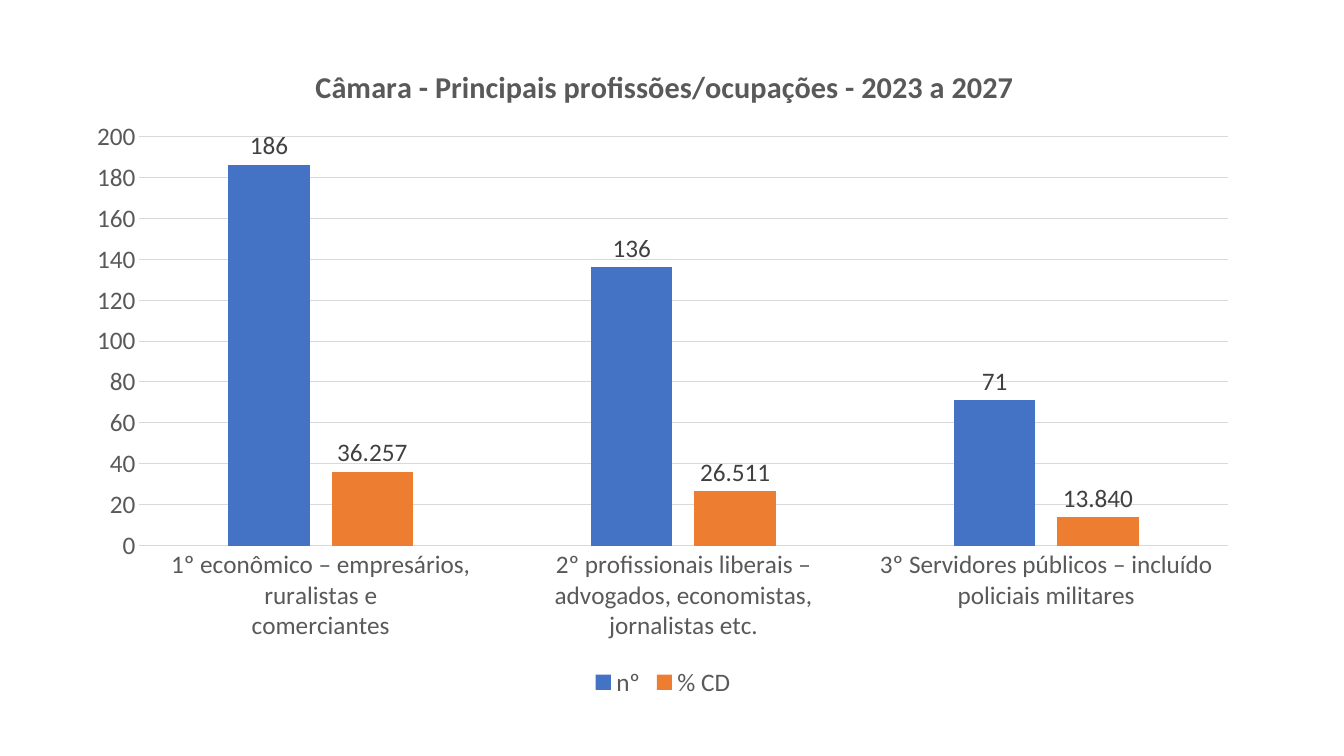
import pptx
import pptx.chart.data
import pptx.dml.color
import pptx.enum.chart
import pptx.oxml
import pptx.oxml.ns
import pptx.util
from dataclasses import dataclass

TITLE = "Câmara - Principais profissões/ocupações - 2023 a 2027"
CATEGORIES = [
    "1º econômico – empresários, ruralistas e\ncomerciantes",
    "2º profissionais liberais – advogados, economistas,\njornalistas etc.",
    "3º Servidores públicos – incluído policiais militares",
]
# name, values, colour, number format
SERIES = [
    ("nº", (186, 136, 71), "4472C4", "General"),
    ("% CD", (36.257, 26.511, 13.84), "ED7D31", "0.000"),
]
SLIDE_SIZE = (13.33, 7.5)
CHART_BOX = (0.74, 0.33, 11.67, 6.64)
# Shares of the chart's size
PLOT_SHARE = {"x": 0.055, "y": 0.154, "w": 0.925, "h": 0.612}
TITLE_SHARE = {"x": 0.2, "y": 0.04}


@dataclass(frozen=True)
class Theme:
    font: str = "Calibri"
    text: str = "595959"
    label: str = "404040"
    line: str = "D9D9D9"
    body_size: float = 18
    title_size: float = 21.6
    line_width: float = 0.75


THEME = Theme()


def color(code):
    return pptx.dml.color.RGBColor.from_string(code)


def style_font(font, code=THEME.text, size=THEME.body_size, bold=False):
    font.name = THEME.font
    font.size = pptx.util.Pt(size)
    font.bold = bold
    font.color.rgb = color(code)


def style_line(line):
    line.color.rgb = color(THEME.line)
    line.width = pptx.util.Pt(THEME.line_width)


def place(element, shares, index, inner=False):
    """Give a chart part a manual layout in shares of the chart's size."""
    for old in element.findall(pptx.oxml.ns.qn("c:layout")):
        element.remove(old)
    target = '<c:layoutTarget val="inner"/>' if inner else ""
    modes = "".join(f'<c:{key}Mode val="edge"/>' for key in shares if key in "xy")
    values = "".join(f'<c:{key} val="{share}"/>' for key, share in shares.items())
    element.insert(index, pptx.oxml.parse_xml(
        f'<c:layout {pptx.oxml.ns.nsdecls("c")}><c:manualLayout>'
        f"{target}{modes}{values}</c:manualLayout></c:layout>"))


def add_column_chart(page):
    data = pptx.chart.data.CategoryChartData()
    data.categories = CATEGORIES
    for name, values, _, number_format in SERIES:
        data.add_series(name, values, number_format)
    return page.shapes.add_chart(
        pptx.enum.chart.XL_CHART_TYPE.COLUMN_CLUSTERED,
        *map(pptx.util.Inches, CHART_BOX), data).chart


def style_title(chart):
    chart.has_title = True
    para = chart.chart_title.text_frame.paragraphs[0]
    para.text = TITLE
    style_font(para.runs[0].font, size=THEME.title_size, bold=True)
    chart.chart_title.include_in_layout = False
    place(chart.chart_title._element, TITLE_SHARE, 1)


def style_axes(chart):
    for axis in (chart.category_axis, chart.value_axis):
        axis.major_tick_mark = pptx.enum.chart.XL_TICK_MARK.NONE
        axis.minor_tick_mark = pptx.enum.chart.XL_TICK_MARK.NONE
        style_font(axis.tick_labels.font)
    style_line(chart.category_axis.format.line)
    values = chart.value_axis
    values.minimum_scale, values.maximum_scale, values.major_unit = 0, 200, 20
    values.tick_labels.number_format = "General"
    values.tick_labels.number_format_is_linked = False
    values.format.line.fill.background()
    style_line(values.major_gridlines.format.line)


def style_columns(chart):
    plot = chart.plots[0]
    plot.gap_width, plot.overlap = 219, -27
    plot.vary_by_categories = False
    for series, (_, _, code, number_format) in zip(plot.series, SERIES):
        series.format.fill.solid()
        series.format.fill.fore_color.rgb = color(code)
        series.invert_if_negative = False
        labels = series.data_labels
        labels.show_value = True
        labels.position = pptx.enum.chart.XL_LABEL_POSITION.OUTSIDE_END
        labels.number_format = number_format
        labels.number_format_is_linked = False
        style_font(labels.font, THEME.label)


def style_legend(chart):
    chart.has_legend = True
    chart.legend.position = pptx.enum.chart.XL_LEGEND_POSITION.BOTTOM
    chart.legend.include_in_layout = False
    style_font(chart.legend.font)


def main():
    deck = pptx.Presentation()
    deck.slide_width, deck.slide_height = map(pptx.util.Inches, SLIDE_SIZE)
    page = deck.slides.add_slide(deck.slide_layouts[6])
    chart = add_column_chart(page)
    style_font(chart.font)
    style_title(chart)
    style_axes(chart)
    style_columns(chart)
    style_legend(chart)
    plot_area = chart._chartSpace.find(".//" + pptx.oxml.ns.qn("c:plotArea"))
    place(plot_area, PLOT_SHARE, 0, inner=True)
    deck.save("out.pptx")


if __name__ == "__main__":
    main()
